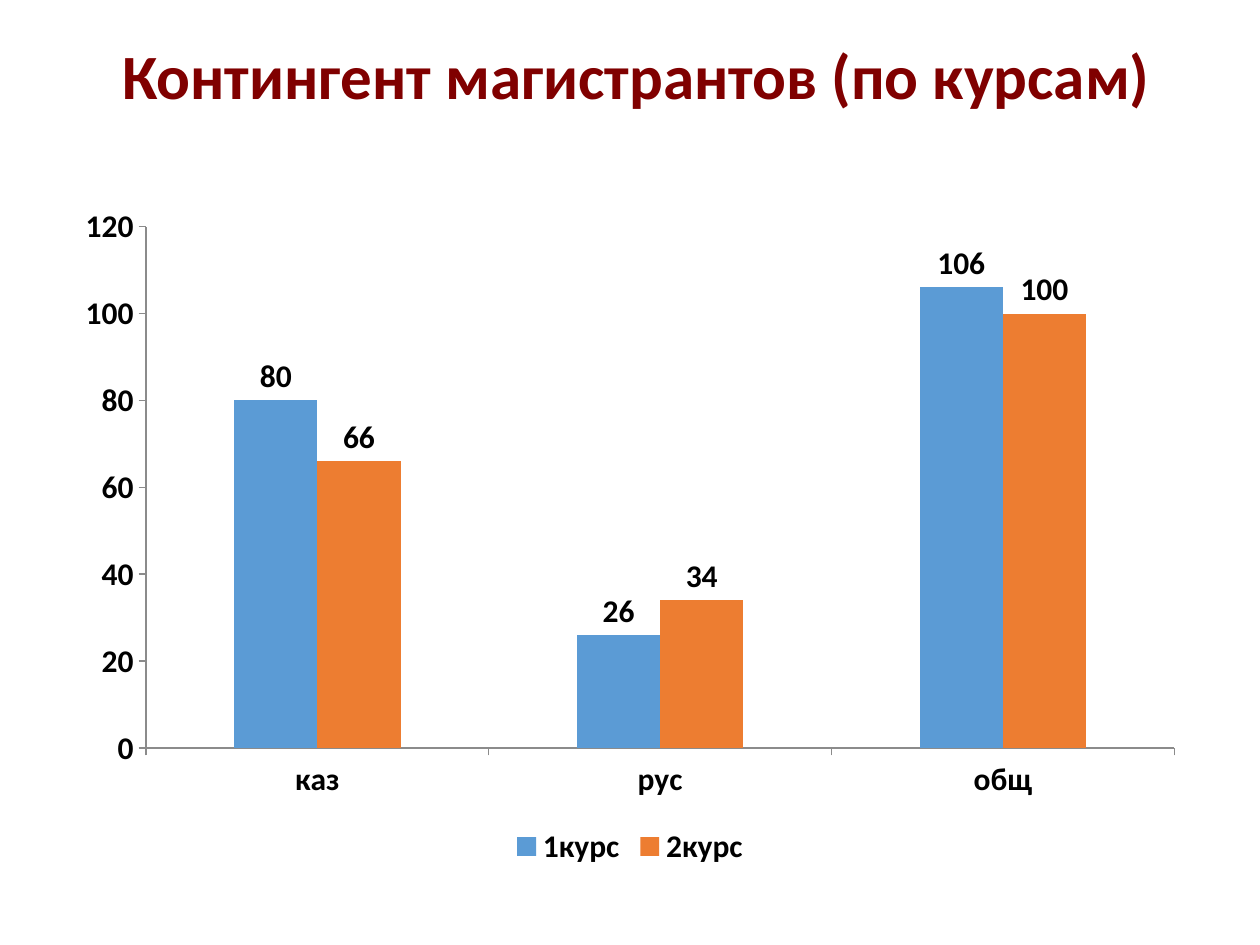
"""Build a slide with a clustered column chart of master's students by year."""
from dataclasses import dataclass

from pptx import Presentation
from pptx.chart.data import CategoryChartData
from pptx.dml.color import RGBColor
from pptx.enum.chart import XL_CHART_TYPE, XL_LABEL_POSITION, XL_LEGEND_POSITION, XL_TICK_MARK
from pptx.enum.text import MSO_ANCHOR, PP_ALIGN
from pptx.util import Inches, Pt


@dataclass(frozen=True)
class Theme:
    font: str = "Calibri"
    title_size: int = 36
    chart_size: int = 18
    title: str = "800000"
    text: str = "000000"
    axis: str = "8B8B8B"
    series: tuple = ("5B9BD5", "ED7D31")


class SlideBuilder:
    def __init__(self, page, theme):
        self.page = page
        self.theme = theme

    def style_font(self, font, size, color):
        font.name = self.theme.font
        font.size = Pt(size)
        font.bold = True
        font.color.rgb = RGBColor.from_string(color)

    def add_title(self, text, left, top, width, height):
        box = self.page.shapes.add_textbox(Inches(left), Inches(top), Inches(width), Inches(height))
        frame = box.text_frame
        frame.word_wrap = True
        frame.vertical_anchor = MSO_ANCHOR.MIDDLE
        para = frame.paragraphs[0]
        para.text = text
        para.alignment = PP_ALIGN.CENTER
        para.line_spacing = 0.9
        self.style_font(para.font, self.theme.title_size, self.theme.title)

    def add_columns(self, categories, series, left, top, width, height):
        data = CategoryChartData()
        data.categories = categories
        for name, values in series.items():
            data.add_series(name, values)
        chart = self.page.shapes.add_chart(
            XL_CHART_TYPE.COLUMN_CLUSTERED,
            Inches(left), Inches(top), Inches(width), Inches(height), data,
        ).chart
        self.style_font(chart.font, self.theme.chart_size, self.theme.text)
        chart.has_title = False
        chart.has_legend = True
        chart.legend.position = XL_LEGEND_POSITION.BOTTOM
        chart.legend.include_in_layout = False
        for axis in (chart.category_axis, chart.value_axis):
            axis.has_major_gridlines = False
            axis.major_tick_mark = XL_TICK_MARK.OUTSIDE
            axis.format.line.width = Pt(0.75)
            axis.format.line.color.rgb = RGBColor.from_string(self.theme.axis)
        chart.value_axis.minimum_scale = 0
        chart.value_axis.maximum_scale = 120
        chart.value_axis.major_unit = 20
        plot = chart.plots[0]
        plot.gap_width = 212
        plot.overlap = 0
        plot.vary_by_categories = False
        plot.has_data_labels = True
        plot.data_labels.show_value = True
        plot.data_labels.position = XL_LABEL_POSITION.OUTSIDE_END
        for columns, color in zip(plot.series, self.theme.series):
            columns.format.fill.solid()
            columns.format.fill.fore_color.rgb = RGBColor.from_string(color)


def main():
    deck = Presentation()
    deck.slide_width, deck.slide_height = Inches(10), Inches(7.5)
    builder = SlideBuilder(deck.slides.add_slide(deck.slide_layouts[6]), Theme())
    builder.add_title("Контингент магистрантов (по курсам)", 0.55, 0, 9, 1.25)
    builder.add_columns(
        ("каз", "рус", "общ"),
        {"1курс": (80, 26, 106), "2курс": (66, 34, 100)},
        0.5, 1.54, 9, 5.38,
    )
    deck.save("out.pptx")


if __name__ == "__main__":
    main()
